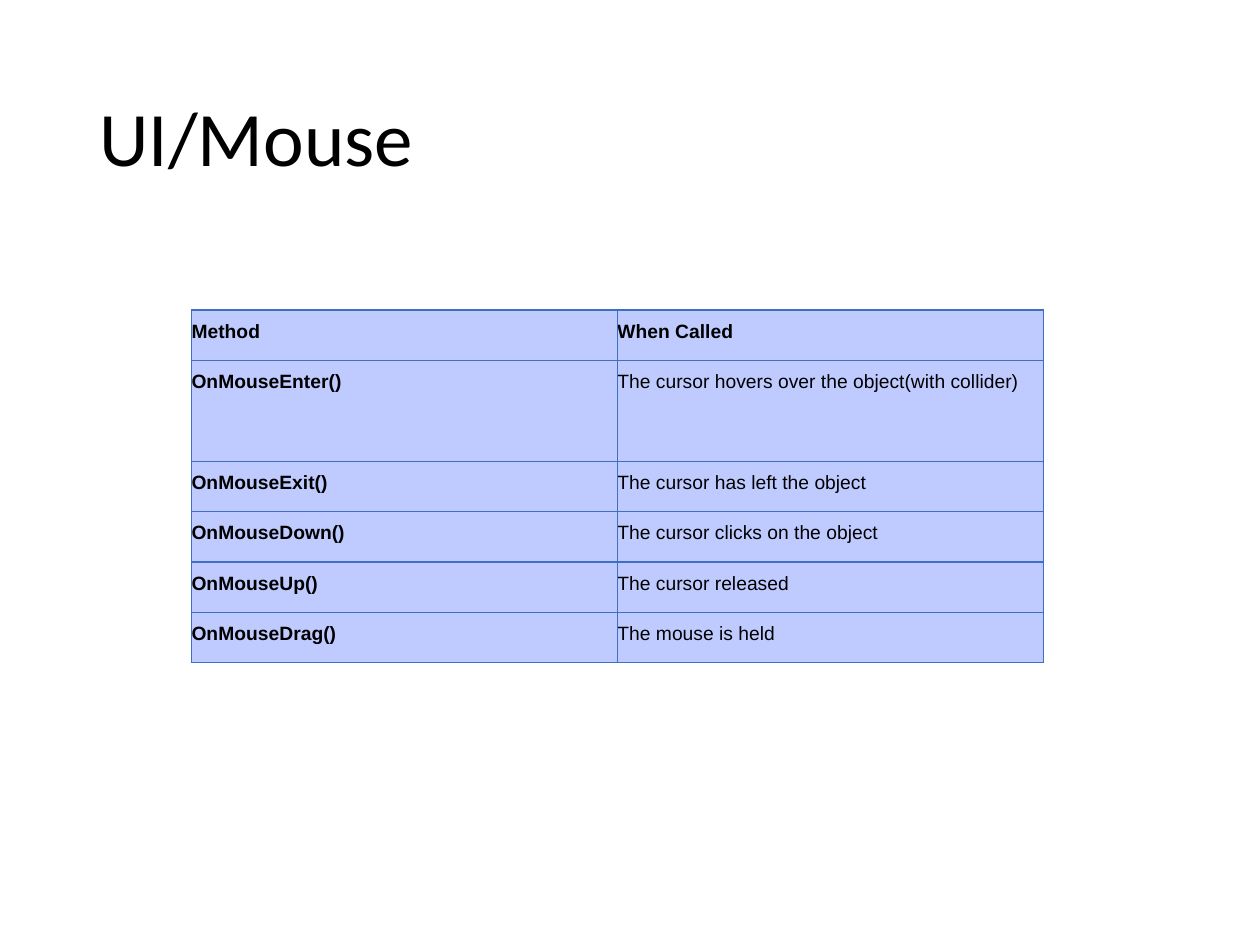
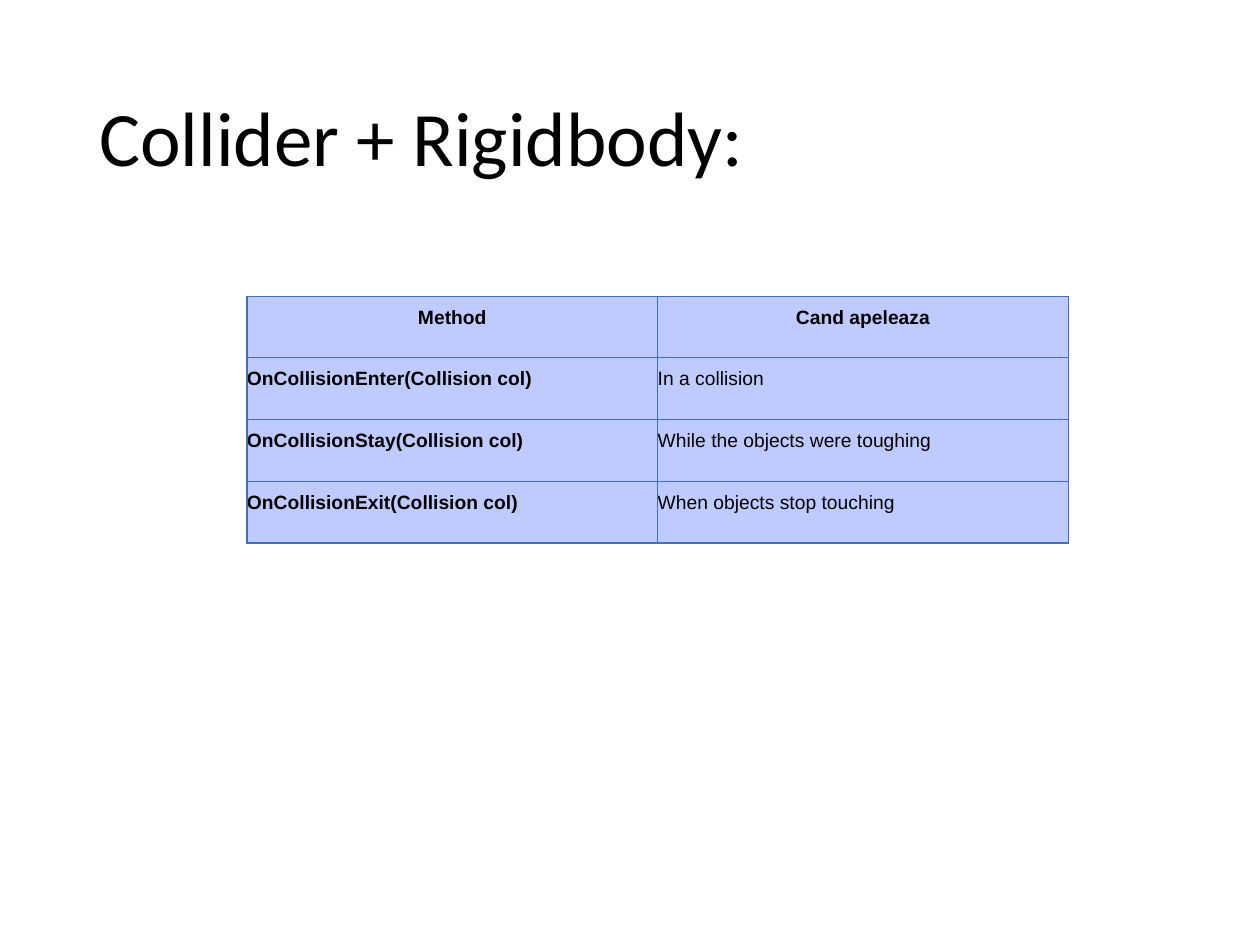
from lxml import etree
from pptx import Presentation
from pptx.dml.color import RGBColor
from pptx.enum import text
from pptx.oxml import ns
from pptx.util import Inches, Pt

BLACK = RGBColor(0x00, 0x00, 0x00)
CELL_FILL = RGBColor(0xBF, 0xCB, 0xFF)
BORDER = RGBColor(0x3F, 0x6F, 0xC3)
TITLE_FONT, TABLE_FONT = "Calibri", "Arial"
TITLE_BOX = (0.69, 0.4, 8.62, 1.45)
JUSTIFY, CENTER = text.PP_ALIGN.JUSTIFY, text.PP_ALIGN.CENTER

MOUSE_ROWS = [
    ("Method", "When Called"),
    ("OnMouseEnter()", "The cursor hovers over the object(with collider)"),
    ("OnMouseExit()", "The cursor has left the object"),
    ("OnMouseDown()", "The cursor clicks on the object"),
    ("OnMouseUp()", "The cursor released"),
    ("OnMouseDrag()", "The mouse is held"),
]
COLLISION_ROWS = [
    ("Method", "Cand apeleaza"),
    ("OnCollisionEnter(Collision col)", "In a collision"),
    ("OnCollisionStay(Collision col)", "While the objects were toughing"),
    ("OnCollisionExit(Collision col)", "When objects stop touching"),
]


def add_run(p, words, font, size, bold=False):
    r = p.add_run()
    r.text = words
    r.font.name, r.font.size, r.font.bold = font, Pt(size), bold
    r.font.color.rgb = BLACK


def add_title(s, words, box=TITLE_BOX):
    tf = s.shapes.add_textbox(*map(Inches, box)).text_frame
    tf.word_wrap = True
    tf.vertical_anchor = text.MSO_ANCHOR.MIDDLE
    p = tf.paragraphs[0]
    p.line_spacing = 0.9
    add_run(p, words, TITLE_FONT, 44)


def add_borders(cell):
    tc_pr = cell._tc.get_or_add_tcPr()
    for side in ("a:lnL", "a:lnR", "a:lnT", "a:lnB"):
        ln = etree.SubElement(tc_pr, ns.qn(side), w=str(Pt(0.75)))
        fill = etree.SubElement(ln, ns.qn("a:solidFill"))
        etree.SubElement(fill, ns.qn("a:srgbClr"), val=str(BORDER))


def fill_cell(cell, words, bold, align):
    cell.margin_left = cell.margin_right = 0
    cell.margin_top = cell.margin_bottom = 0
    add_borders(cell)
    cell.fill.solid()
    cell.fill.fore_color.rgb = CELL_FILL
    p = cell.text_frame.paragraphs[0]
    p.alignment, p.line_spacing = align, 1.5
    add_run(p, words, TABLE_FONT, 11, bold)


def add_method_table(s, rows, left, top, width, heights, header_align):
    table = s.shapes.add_table(
        len(rows), 2, Inches(left), Inches(top), Inches(width), Inches(sum(heights))
    ).table
    for column in table.columns:
        column.width = Inches(width / 2)
    for i, (row, height) in enumerate(zip(rows, heights)):
        table.rows[i].height = Inches(height)
        align = header_align if i == 0 else JUSTIFY
        for j, words in enumerate(row):
            # The header row and the method names are bold
            fill_cell(table.cell(i, j), words, i == 0 or j == 0, align)


def add_method_slide(prs, title, rows, left, top, width, heights, header_align):
    s = prs.slides.add_slide(prs.slide_layouts[6])
    add_title(s, title)
    add_method_table(s, rows, left, top, width, heights, header_align)


def main():
    prs = Presentation()
    prs.slide_width, prs.slide_height = Inches(10), Inches(7.5)
    # Mouse events: the first method has a row of double height
    add_method_slide(prs, "UI/Mouse", MOUSE_ROWS, 1.52, 2.46, 6.76,
                     [0.4, 0.8] + [0.4] * 4, JUSTIFY)
    # Collision events
    add_method_slide(prs, "Collider + Rigidbody:", COLLISION_ROWS, 1.96, 2.35, 6.52,
                     [0.49] * 4, CENTER)
    prs.save("out.pptx")


if __name__ == "__main__":
    main()
